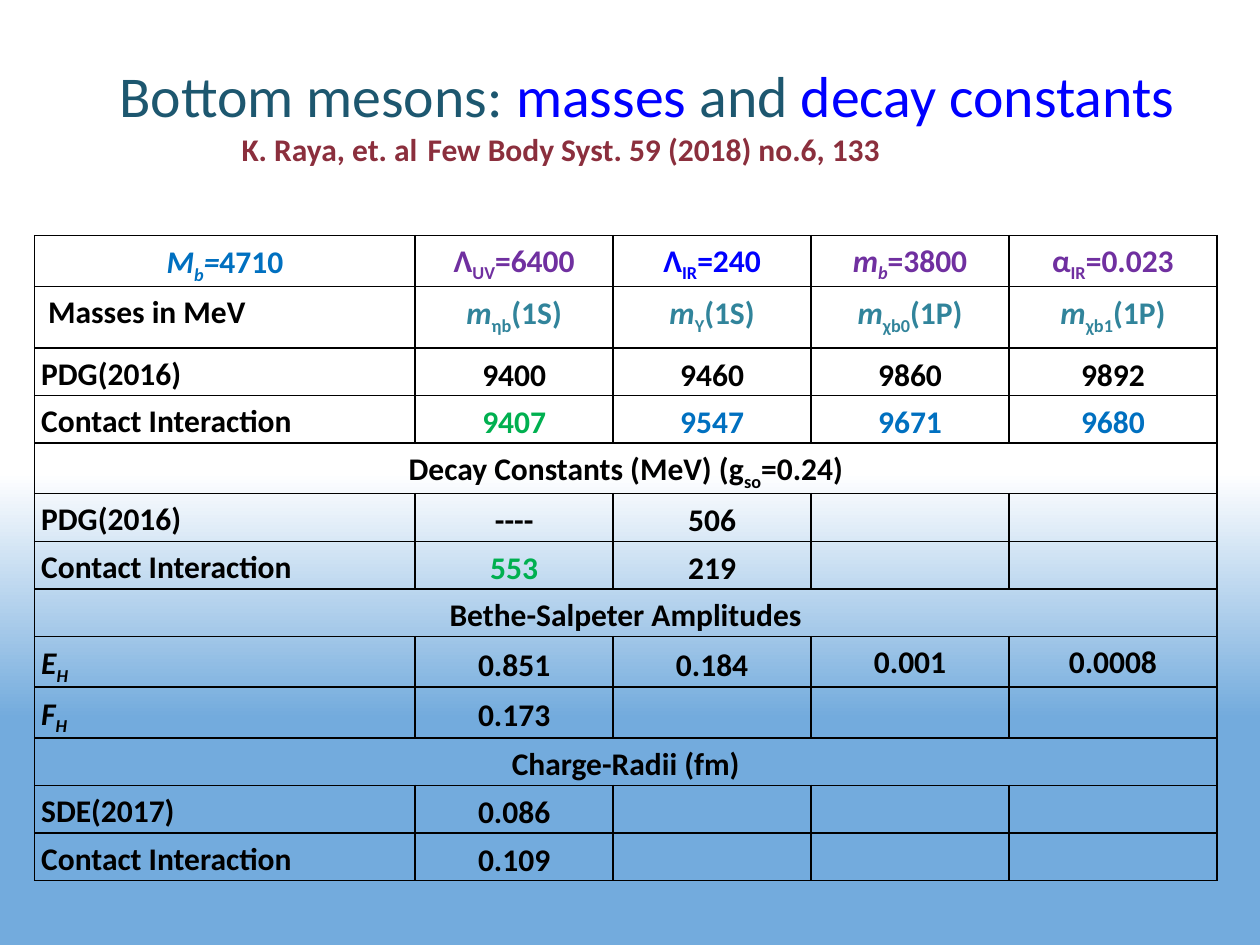
from dataclasses import dataclass

from lxml.etree import SubElement
from pptx import Presentation
from pptx.dml.color import RGBColor as Rgb
from pptx.enum.text import MSO_ANCHOR as Anchor, PP_ALIGN as Align
from pptx.oxml.ns import qn
from pptx.util import Cm, Pt


@dataclass(frozen=True)
class Theme:
    font: str = "Calibri"
    title_size: int = 33
    body_size: int = 18
    title: str = "1D576F"
    highlight: str = "0000FF"
    citation: str = "8B2F3D"
    black: str = "000000"
    blue: str = "0070C0"
    purple: str = "7030A0"
    teal: str = "31849B"
    green: str = "00B050"
    sky_top: str = "FFFFFF"
    sky_bottom: str = "73ABDD"


class SlideBuilder:
    def __init__(self, slide, theme):
        self.slide, self.theme = slide, theme

    def background(self):
        fill = self.slide.background.fill
        fill.gradient()
        fill.gradient_angle = 270
        colors = (self.theme.sky_top, self.theme.sky_bottom)
        for stop, position, color in zip(fill.gradient_stops, (0.5, 0.76), colors):
            stop.position = position
            stop.color.rgb = Rgb.from_string(color)

    def style(self, paragraph, size, color=None, bold=None):
        font = paragraph.font
        font.name, font.size, font.bold = self.theme.font, Pt(size), bold
        if color:
            font.color.rgb = Rgb.from_string(color)

    def text_box(self, left, top, width, height, anchor=Anchor.TOP):
        box = self.slide.shapes.add_textbox(Cm(left), Cm(top), Cm(width), Cm(height))
        frame = box.text_frame
        frame.word_wrap, frame.vertical_anchor = True, anchor
        return frame.paragraphs[0]

    def title(self, pieces):
        heading = self.text_box(1.19, 0.61, 23.7, 2.11, Anchor.BOTTOM)
        heading.alignment = Align.CENTER
        self.style(heading, self.theme.title_size)
        for text, color in pieces:
            run = heading.add_run()
            run.text = text
            run.font.color.rgb = Rgb.from_string(color)

    def citation(self, text, tab):
        line = self.text_box(4.62, 2.49, 19, 1.02)
        tabs = SubElement(line._p.get_or_add_pPr(), qn("a:tabLst"))
        SubElement(tabs, qn("a:tab"), pos=str(Cm(tab)), algn="l")
        self.style(line, self.theme.body_size, self.theme.citation, True)
        line.add_run().text = text

    def borders(self, cell):
        properties = cell._tc.get_or_add_tcPr()
        for side in ("lnL", "lnR", "lnT", "lnB"):
            line = SubElement(properties, qn(f"a:{side}"), w=str(Pt(1)))
            fill = SubElement(line, qn("a:solidFill"))
            SubElement(fill, qn("a:srgbClr"), val=self.theme.black)

    def cell(self, cell, content, align, anchor, margins):
        """Runs are split by |; a leading / means italic, _ means subscript."""
        text, color = content if isinstance(content, tuple) else (content, self.theme.black)
        self.borders(cell)
        cell.fill.background()
        cell.vertical_anchor = anchor
        cell.margin_left, cell.margin_top, cell.margin_right = map(Cm, margins)
        cell.margin_bottom = 0
        paragraph = cell.text_frame.paragraphs[0]
        paragraph.alignment, paragraph.line_spacing = align, 1.15
        paragraph.space_after = Pt(10)
        self.style(paragraph, self.theme.body_size, color, True)
        for piece in text.split("|") if text else ():
            run = paragraph.add_run()
            run.text = piece.lstrip("/_")
            marks = piece[:len(piece) - len(run.text)]
            if "/" in marks:
                run.font.italic = True
            if "_" in marks:
                run.font._element.set("baseline", "-25000")

    def table(self, left, top, widths, heights, rows):
        table = self.slide.shapes.add_table(
            len(rows), len(widths), Cm(left), Cm(top),
            Cm(sum(widths)), Cm(sum(heights))).table
        table.first_row = table.horz_banding = False
        for column, width in zip(table.columns, widths):
            column.width = Cm(width)
        for r, (row, height) in enumerate(zip(rows, heights)):
            table.rows[r].height = Cm(height)
            section = len(row) == 1
            if section:
                table.cell(r, 0).merge(table.cell(r, len(widths) - 1))
            for c in range(len(widths)):
                centred = c > 0 or r == 0 or section
                # Headings and the P-wave amplitudes sit at the top
                top_set = c == 0 or r < 2 or (r == 8 and c > 2)
                margins = (0, 0, 0) if r == 0 and c else (0.13, 0.03, 0.13)
                if (r, c) == (1, 0):
                    margins = (0.27, 0.03, 0.13)
                self.cell(table.cell(r, c), row[c] if c < len(row) else "",
                          Align.CENTER if centred else Align.LEFT,
                          Anchor.TOP if top_set else Anchor.MIDDLE, margins)


def main():
    theme = Theme()
    deck = Presentation()
    deck.slide_width, deck.slide_height = Cm(25.4), Cm(19.05)
    builder = SlideBuilder(deck.slides.add_slide(deck.slide_layouts[6]), theme)
    builder.background()

    # Meson table: parameters, masses, decay constants, amplitudes, radii
    contact = "Contact Interaction"
    meson_rows = [
        [("/M|/_b|/=|4710", theme.blue), ("Λ|_UV|=6400", theme.purple),
         ("Λ|_IR|=240", theme.highlight), ("/m|/_b|=3800", theme.purple),
         ("α|_IR|=0.023", theme.purple)],
        ["Masses in MeV"] + [
            (f"/m|_{state}|({level})", theme.teal)
            for state, level in (("ηb", "1S"), ("Υ", "1S"), ("χb0", "1P"), ("χb1", "1P"))],
        ["PDG(2016)", "9400", "9460", "9860", "9892"],
        [contact, ("9407", theme.green), ("9547", theme.blue),
         ("9671", theme.blue), ("9680", theme.blue)],
        ["Decay Constants (MeV) (g|_so|=0.24)"],
        ["PDG(2016)", "----", "506", "", ""],
        [contact, ("553", theme.green), "219", "", ""],
        ["Bethe-Salpeter Amplitudes"],
        ["/E|/_H", "0.851", "0.184", "0.001", "0.0008"],
        ["/F|/_H", "0.173", "", "", ""],
        ["Charge-Radii (fm)"],
        ["SDE(2017)", "0.086", "", "", ""],
        [contact, "0.109", "", "", ""],
    ]
    builder.table(0.7, 4.75, [7.67, 3.99, 3.99, 3.99, 4.19],
                  [0.99, 1.24] + [0.96] * 11, meson_rows)

    # Citation and title
    builder.citation("K. Raya, et. al\tFew Body Syst. 59 (2018) no.6, 133", 3.75)
    builder.title([("Bottom mesons: ", theme.title), ("masses", theme.highlight),
                   (" and ", theme.title), ("decay constants", theme.highlight)])

    deck.save("out.pptx")


if __name__ == "__main__":
    main()
